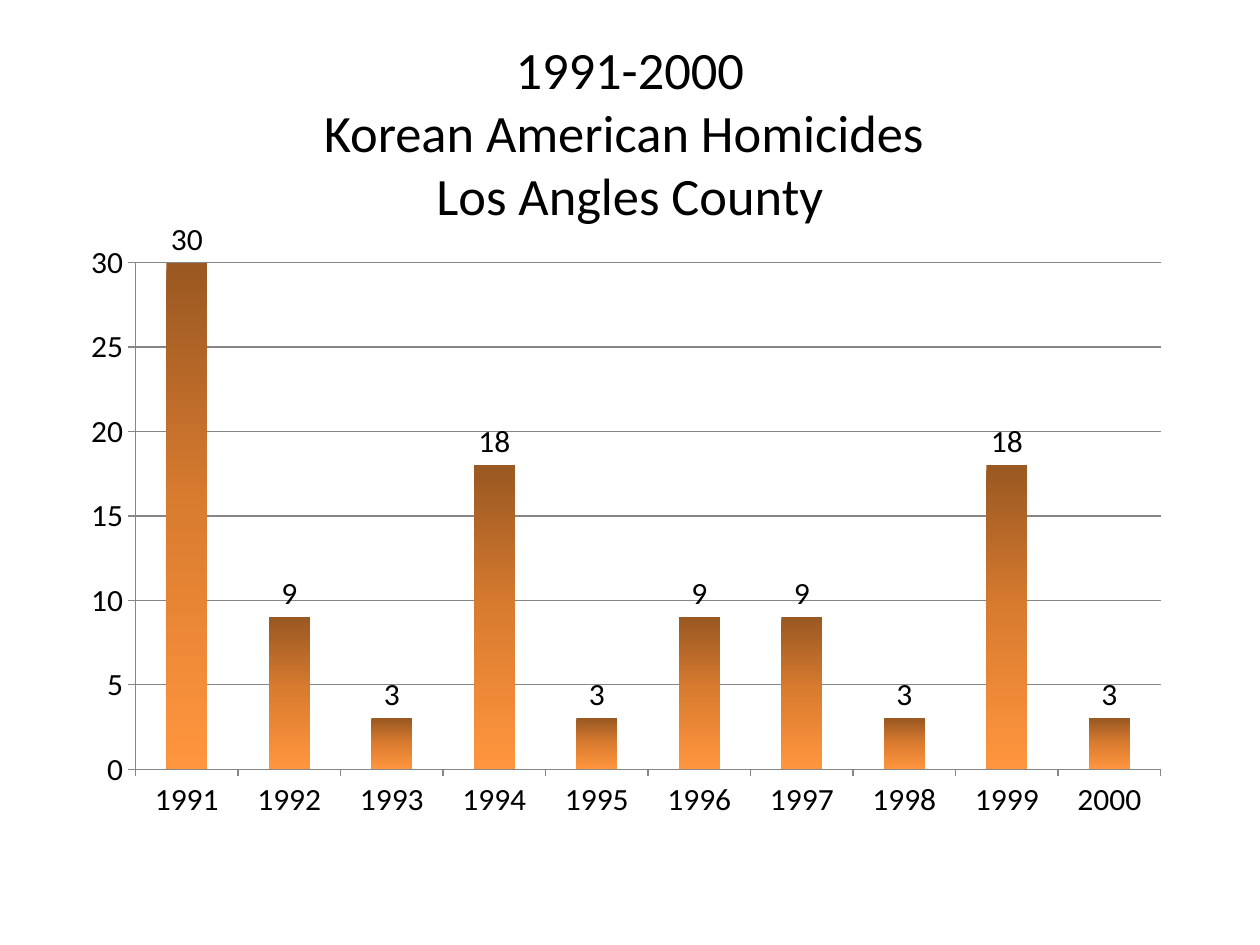
from copy import deepcopy

from pptx import Presentation
from pptx.chart.data import CategoryChartData
from pptx.dml.color import RGBColor
from pptx.enum.chart import XL_CHART_TYPE, XL_LABEL_POSITION, XL_TICK_MARK
from pptx.enum.text import MSO_ANCHOR, PP_ALIGN
from pptx.oxml import parse_xml
from pptx.oxml.ns import nsdecls, qn
from pptx.util import Inches, Pt

COLUMNS = XL_CHART_TYPE.COLUMN_CLUSTERED
OUTSIDE_END = XL_LABEL_POSITION.OUTSIDE_END
TICK_OUT = XL_TICK_MARK.OUTSIDE
MIDDLE = MSO_ANCHOR.MIDDLE
CENTER = PP_ALIGN.CENTER

FONT = "Calibri"
COLORS = {
    "text": "000000",
    "axis": "868686",
    "bar_top": "9A5822",
    "bar_middle": "DB7D30",
    "bar_bottom": "FF953E",
}
HOMICIDES = [30, 9, 3, 18, 3, 9, 9, 3, 18, 3]
YEARS = [str(1991 + i) for i in range(len(HOMICIDES))]


def rgb(name):
    return RGBColor.from_string(COLORS[name])


def set_font(font, size):
    font.name = FONT
    font.size = Pt(size)
    font.color.rgb = rgb("text")


def add_title(s, text, x, y, w, h):
    tf = s.shapes.add_textbox(Inches(x), Inches(y), Inches(w), Inches(h)).text_frame
    tf.word_wrap = True
    tf.vertical_anchor = MIDDLE
    p = tf.paragraphs[0]
    p.text = text
    p.alignment = CENTER
    set_font(p.font, 30)


def set_plot_layout(chart, x, y, w, h):
    plot_area = chart._chartSpace.chart.plotArea
    for old in plot_area.findall(qn("c:layout")):
        plot_area.remove(old)
    plot_area.insert(0, parse_xml(
        f'<c:layout {nsdecls("c")}><c:manualLayout><c:layoutTarget val="inner"/>'
        '<c:xMode val="edge"/><c:yMode val="edge"/>'
        f'<c:x val="{x}"/><c:y val="{y}"/><c:w val="{w}"/><c:h val="{h}"/>'
        '</c:manualLayout></c:layout>'))


def fill_gradient(series, names):
    fill = series.format.fill
    fill.gradient()
    fill.gradient_angle = 270
    stops = series._element.find(".//" + qn("a:gsLst"))
    while len(stops) < len(names):
        stops.append(deepcopy(stops[-1]))
    for i, (stop, name) in enumerate(zip(fill.gradient_stops, names)):
        stop.position = i / (len(names) - 1)
        stop.color.rgb = rgb(name)


def style_axis(axis):
    axis.major_tick_mark = TICK_OUT
    axis.format.line.color.rgb = rgb("axis")
    axis.format.line.width = Pt(0.75)


def add_column_chart(s, x, y, w, h):
    data = CategoryChartData()
    data.categories = YEARS
    data.add_series("Series 1", HOMICIDES)
    chart = s.shapes.add_chart(
        COLUMNS, Inches(x), Inches(y), Inches(w), Inches(h), data).chart
    set_font(chart.font, 18)
    chart.has_title = False
    chart.has_legend = False
    set_plot_layout(chart, 0.064, 0.045, 0.904, 0.832)

    style_axis(chart.category_axis)
    axis = chart.value_axis
    style_axis(axis)
    axis.minimum_scale = 0
    axis.maximum_scale = 30
    axis.major_unit = 5
    axis.has_major_gridlines = True
    axis.major_gridlines.format.line.color.rgb = rgb("axis")
    axis.major_gridlines.format.line.width = Pt(0.75)

    plot = chart.plots[0]
    plot.gap_width = 150
    plot.vary_by_categories = False
    plot.has_data_labels = True
    labels = plot.data_labels
    labels.show_value = True
    labels.position = OUTSIDE_END
    set_font(labels.font, 18)
    fill_gradient(plot.series[0], ["bar_top", "bar_middle", "bar_bottom"])


def main():
    prs = Presentation()
    prs.slide_width = Inches(10)
    prs.slide_height = Inches(7.5)
    s = prs.slides.add_slide(prs.slide_layouts[6])
    add_title(s, "1991-2000\vKorean American Homicides \vLos Angles County",
              0.5, 0.42, 9, 1.25)
    add_column_chart(s, 0.5, 1.75, 9, 4.95)
    prs.save("out.pptx")


if __name__ == "__main__":
    main()
